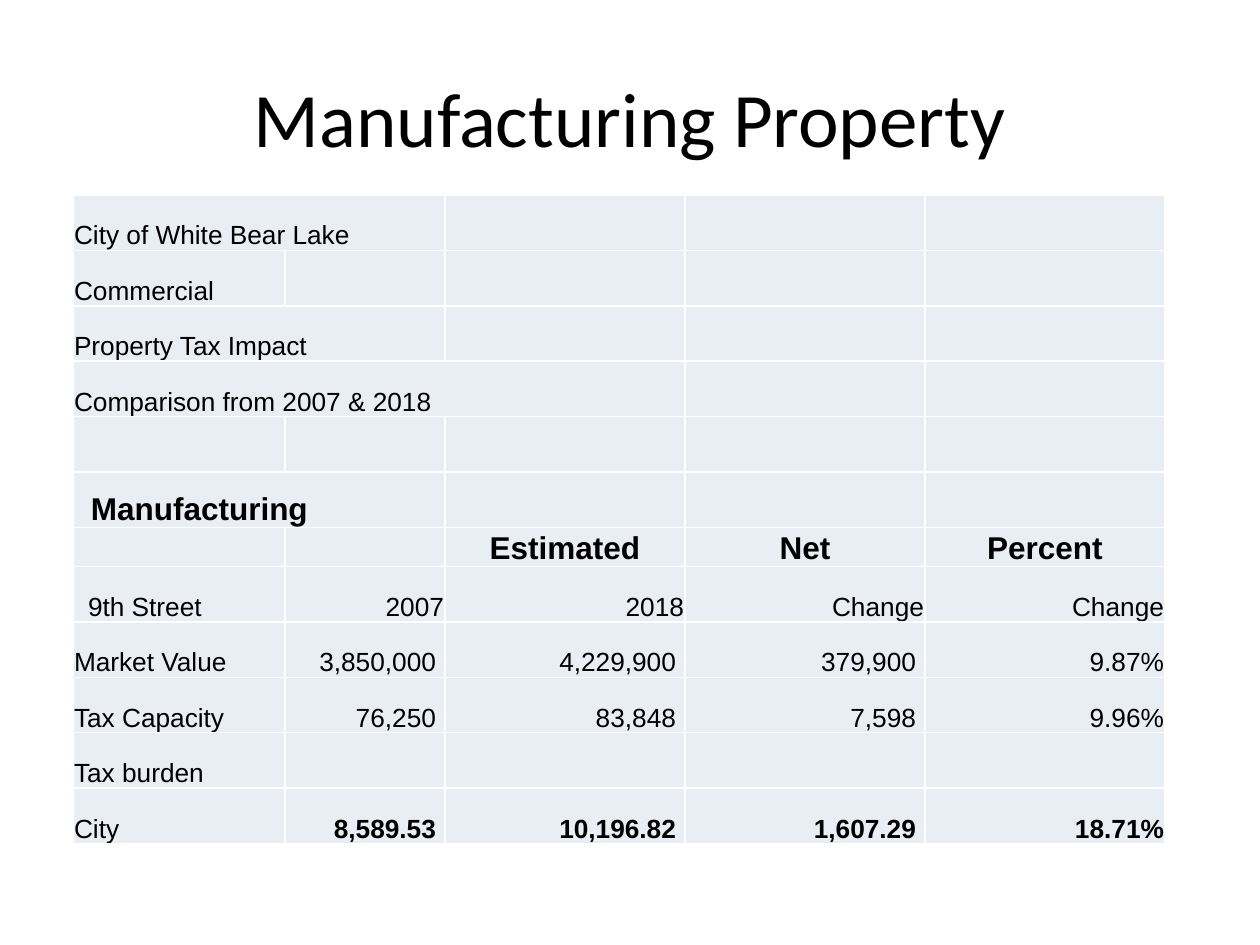
"""Build the manufacturing property tax slide."""
from pptx import Presentation
from pptx import util as u
from pptx.dml.color import RGBColor
from pptx.enum import text

ALIGN = text.PP_ALIGN
COLORS = {"text": "000000", "cell": "E9EDF4"}
COLUMNS = [212, 160, 240, 240, 240]
HEADER_ROW = 6
ROWS = [
    ["City of White Bear Lake"],
    ["Commercial"],
    ["Property Tax Impact"],
    ["Comparison from 2007 & 2018"],
    [],
    ["Manufacturing"],
    ["", "", "Estimated", "Net", "Percent"],
    ["9th Street", "2007", "2018", "Change", "Change"],
    ["Market Value", "3,850,000", "4,229,900", "379,900", "9.87%"],
    ["Tax Capacity", "76,250", "83,848", "7,598", "9.96%"],
    ["Tax burden"],
    ["City", "8,589.53", "10,196.82", "1,607.29", "18.71%"],
]
SPANS = {0: 2, 2: 2, 3: 3, 5: 2}
INDENTS = {"Manufacturing": 18, "9th Street": 15}


class Deck:
    """Hold the style and the current slide."""

    def __init__(self):
        self.prs = Presentation()
        self.prs.slide_width, self.prs.slide_height = self.px(1260), self.px(945)
        self.s = self.prs.slides.add_slide(self.prs.slide_layouts[5])

    def px(self, n):
        """Turn pixels into EMU."""
        return u.Emu(round(n * 914400 / 126))

    def style(self, p, size, font, align, bold=False):
        """Format one paragraph."""
        p.alignment = align
        p.font.size, p.font.name, p.font.bold = u.Pt(size), font, bold
        p.font.color.rgb = RGBColor.from_string(COLORS["text"])

    def title(self, words, x, y, w, h):
        """Place and fill the title placeholder."""
        sp = self.s.shapes.title
        sp.left, sp.top, sp.width, sp.height = map(self.px, (x, y, w, h))
        tf = sp.text_frame
        tf.text = words
        tf.vertical_anchor = text.MSO_ANCHOR.MIDDLE
        self.style(tf.paragraphs[0], 44, "Calibri", ALIGN.CENTER)

    def cell(self, cell, words, align, size, bold, left, right):
        """Fill and format one table cell."""
        cell.fill.solid()
        cell.fill.fore_color.rgb = RGBColor.from_string(COLORS["cell"])
        cell.vertical_anchor = text.MSO_ANCHOR.BOTTOM
        cell.margin_left, cell.margin_right = self.px(left), self.px(right)
        cell.margin_top, cell.margin_bottom = self.px(1), 0
        cell.text = words
        self.style(cell.text_frame.paragraphs[0], size, "Arial", align, bold)

    def table(self, x, y, h, header_h):
        """Add the tax comparison table."""
        frame = self.s.shapes.add_table(
            len(ROWS), len(COLUMNS), *map(self.px, (x, y, sum(COLUMNS), h)))
        table = frame.table
        table.first_row = table.horz_banding = False
        for column, width in zip(table.columns, COLUMNS):
            column.width = self.px(width)
        row_h = (h - header_h) / (len(ROWS) - 1)
        for i, row in enumerate(ROWS):
            table.rows[i].height = self.px(header_h if i == HEADER_ROW else row_h)
            for j in range(len(COLUMNS)):
                words = row[j] if j < len(row) else ""
                heading = i == HEADER_ROW or words == "Manufacturing"
                align = (ALIGN.LEFT if j == 0 else
                         ALIGN.CENTER if i == HEADER_ROW else ALIGN.RIGHT)
                bold = heading or (i == len(ROWS) - 1 and j > 0)
                amount = i > HEADER_ROW + 1 and 0 < j < len(COLUMNS) - 1
                self.cell(table.cell(i, j), words, align, 18 if heading else 15,
                          bold, INDENTS.get(words, 1), 9 if amount else 1)
            if i in SPANS:
                table.cell(i, 0).merge(table.cell(i, SPANS[i] - 1))


def main():
    """Build and save the slide."""
    deck = Deck()
    deck.title("Manufacturing Property", 63, 38, 1134, 157)
    deck.table(73, 195, 649, 39)
    deck.prs.save("out.pptx")


if __name__ == "__main__":
    main()
